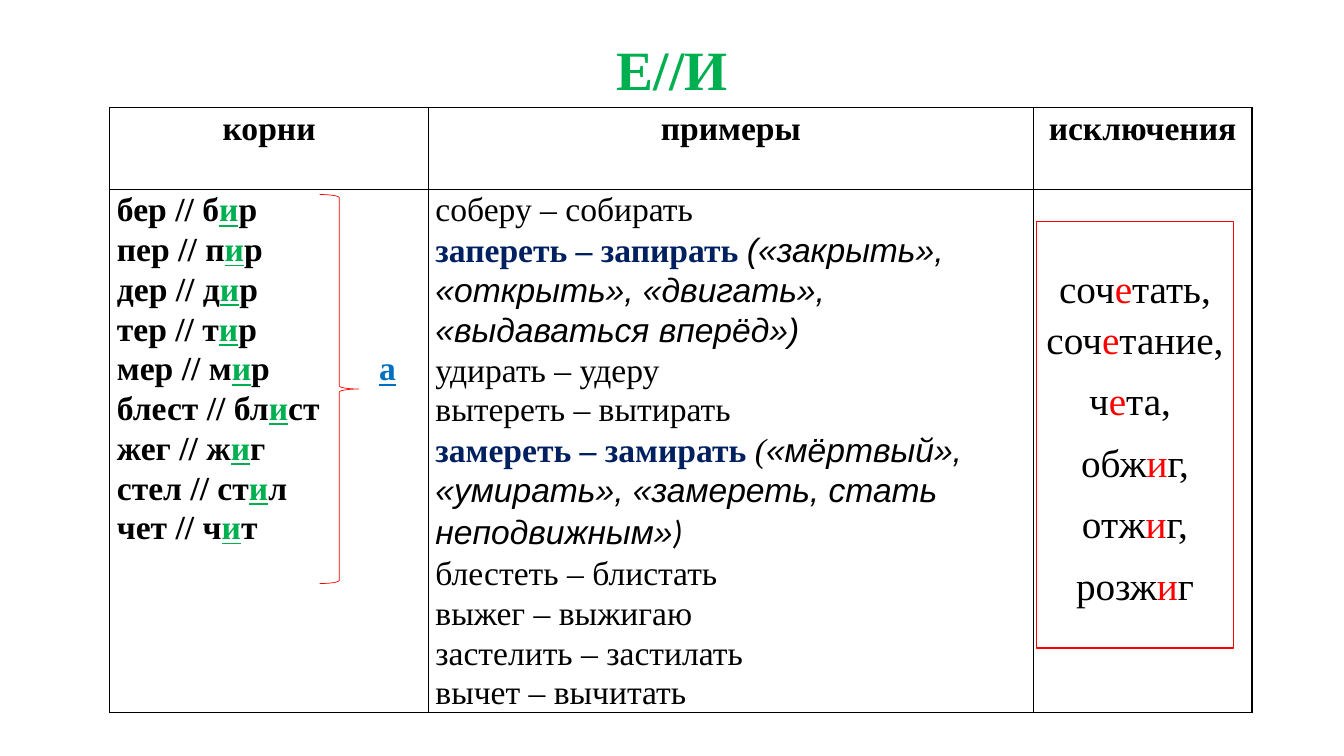
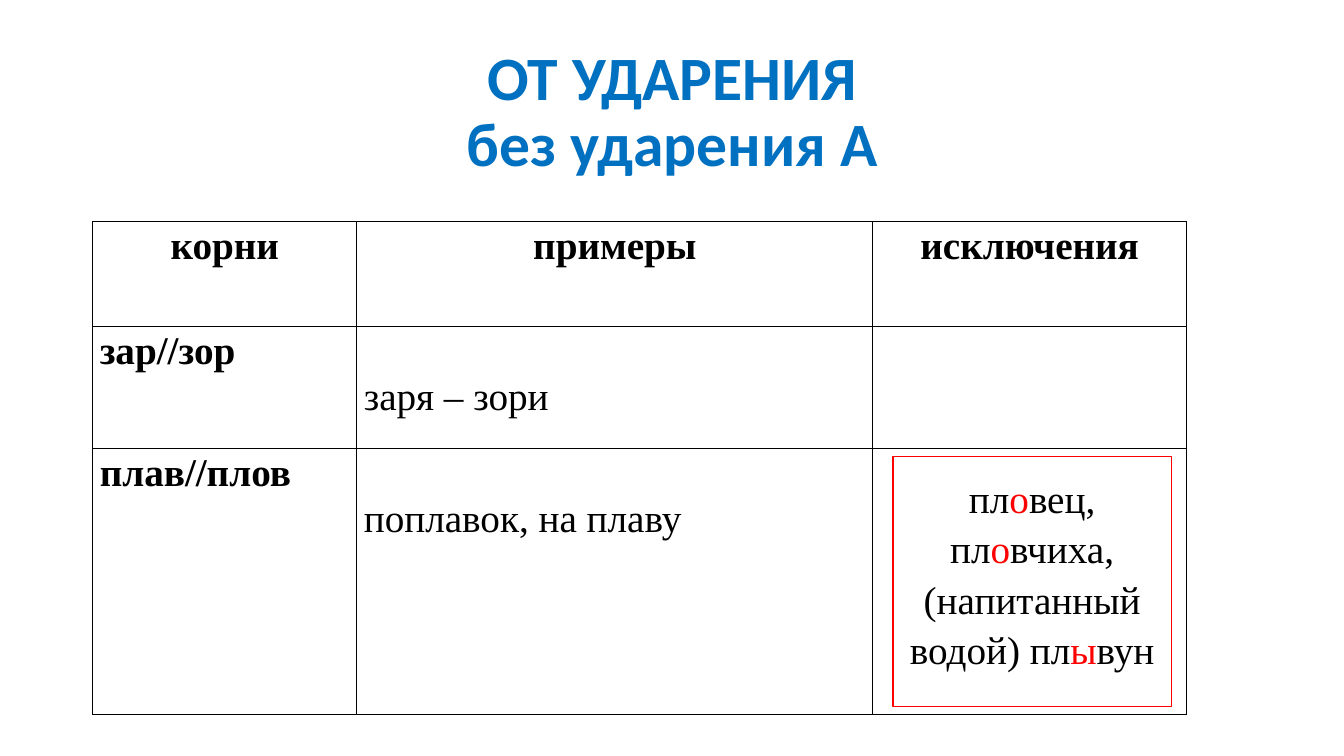
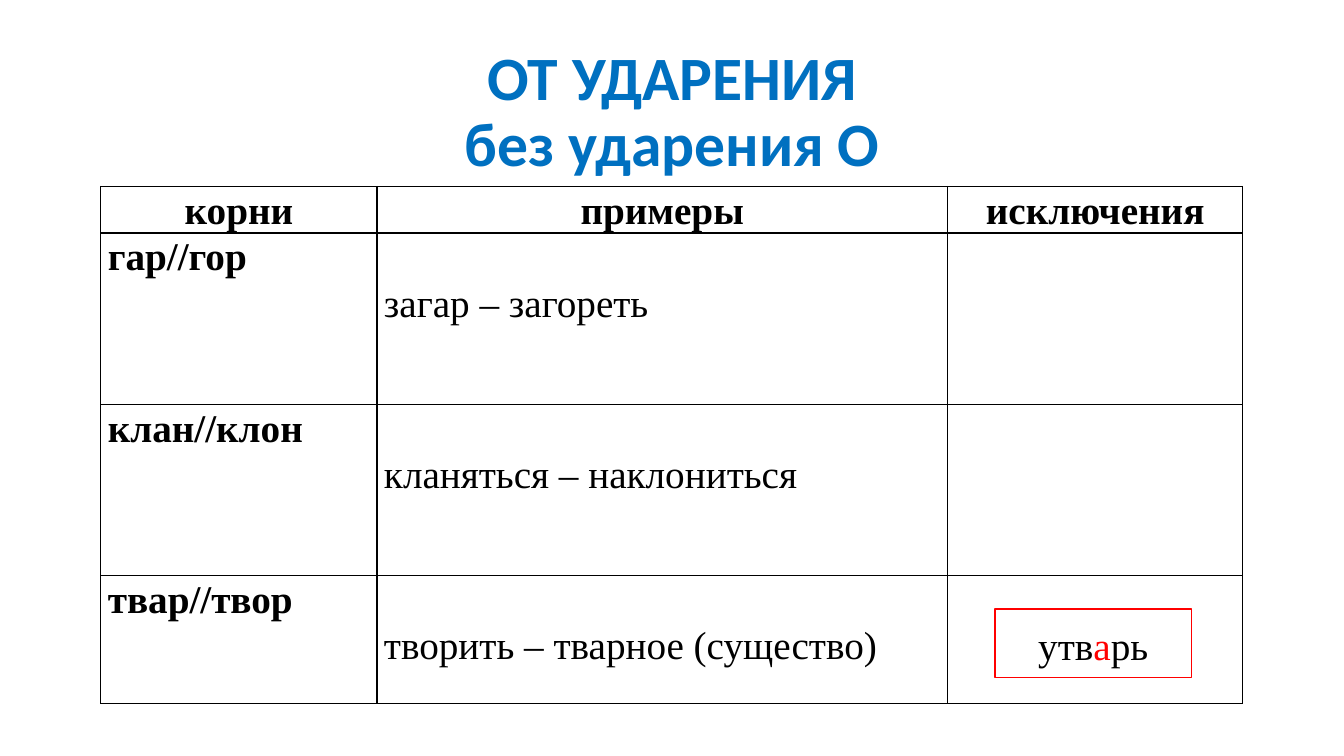
from dataclasses import dataclass
from typing import Any

from lxml import etree
from pptx import Presentation
from pptx.dml.color import RGBColor
from pptx.enum.shapes import MSO_SHAPE
from pptx.enum.text import MSO_ANCHOR, MSO_AUTO_SIZE, PP_ALIGN
from pptx.oxml.ns import qn
from pptx.util import Emu, Inches, Pt

RECT, BRACE = MSO_SHAPE.RECTANGLE, MSO_SHAPE.RIGHT_BRACE
TOP, MIDDLE = MSO_ANCHOR.TOP, MSO_ANCHOR.MIDDLE
LEFT, CENTER = PP_ALIGN.LEFT, PP_ALIGN.CENTER
FIXED = MSO_AUTO_SIZE.NONE

BLACK = RGBColor(0x00, 0x00, 0x00)
WHITE = RGBColor(0xFF, 0xFF, 0xFF)
RED = RGBColor(0xFF, 0x00, 0x00)
GREEN = RGBColor(0x00, 0xB0, 0x50)
BLUE = RGBColor(0x00, 0x70, 0xC0)
NAVY = RGBColor(0x00, 0x20, 0x60)

SERIF, SANS, PLAIN = "Times New Roman", "Arial", "Calibri"
HEADS = ("корни", "примеры", "исключения")

# Grid: ten steps to the inch
STEP = Inches(0.1)
WIDTH, HEIGHT = 133.33, 75
LINE = 4.6  # one line of 28 pt text

# A mark on both sides of a piece of text gives it a style
MARKS: dict[str, dict[str, Any]] = {
    "*": {"color": GREEN, "underline": True},
    "@": {"color": BLUE, "underline": True},
    "^": {"color": RED},
    "#": {"color": NAVY, "bold": True},
    "~": {"name": SANS, "italic": True},
    "%": {"italic": True},
    "$": {"name": PLAIN, "italic": True},
}


@dataclass
class Box:
    left: float
    top: float
    width: float
    height: float

    def place(self) -> tuple[Emu, ...]:
        return tuple(map(steps, (self.left, self.top, self.width, self.height)))


@dataclass
class Title:
    lines: tuple[str, ...]
    height: float = 14.5
    anchor: Any = MIDDLE
    inset: float = 0.5
    size: float = 44
    font: str = PLAIN
    color: RGBColor = BLUE


@dataclass
class Table:
    left: float
    top: float
    cols: tuple[float, ...]
    rows: tuple[float, ...]
    roots: tuple[str, ...]
    words: tuple[str, ...]
    size: int = 28
    drop: float = LINE  # gap above the examples


@dataclass
class Note:
    box: Box
    lines: tuple[str, ...]
    after: int = 8
    foot: float = 0.5


@dataclass
class Page:
    title: Title
    table: Table
    note: Note
    brace: Box | None = None


PAGES = (
    Page(
        Title(("Е//И",), 11.9, TOP, 0.2, 39.6, SERIF, GREEN),
        Table(
            10.9, 10.7, (31.6, 60, 21.7), (8.1, 49.5),
            ("бер // б*и*р\nпер // п*и*р\nдер // д*и*р\nтер // т*и*р\n"
             "мер // м*и*р\t@а@\nблест // бл*и*ст\nжег // ж*и*г\n"
             "стел // ст*и*л\nчет // ч*и*т",),
            ("соберу – собирать\n"
             "#запереть – запирать #~(«закрыть», «открыть», «двигать», "
             "«выдаваться вперёд»)~\n"
             "удирать – удеру\nвытереть – вытирать\n"
             "#замереть – замирать #%(%~«мёртвый», «умирать», "
             "«замереть, стать неподвижным»~$)$\n"
             "блестеть – блистать\nвыжег – выжигаю\n"
             "застелить – застилать\nвычет – вычитать",),
            size=24, drop=0,
        ),
        Note(
            Box(102.8, 22, 19.6, 42.3),
            ("соч^е^тать, соч^е^тание,", "ч^е^та, ", "обж^и^г,", "отж^и^г,",
             "розж^и^г"),
        ),
        Box(31.7, 19.3, 3.9, 38.6),
    ),
    Page(
        Title(("ОТ УДАРЕНИЯ", "без ударения А")),
        Table(
            9.2, 22, (26.2, 51.2, 31.1), (10.4, 12.1, 26.4),
            ("зар//зор", "плав//плов"),
            ("заря – зори", "поплавок, на плаву"),
        ),
        Note(
            Box(88.6, 45.3, 27.6, 24.8),
            ("пл^о^вец, пл^о^вчиха,", "(напитанный водой) пл^ы^вун"),
            after=0, foot=2.5,
        ),
    ),
    Page(
        Title(("ОТ УДАРЕНИЯ", "без ударения О")),
        Table(
            10, 18.5, (27.4, 56.6, 29.3), (4.2, 17, 17, 12.7),
            ("гар//гор", "клан//клон", "твар//твор"),
            ("загар – загореть", "кланяться – наклониться",
             "творить – тварное (существо)"),
        ),
        Note(Box(98.7, 60.4, 19.5, 6.8), ("утв^а^рь",)),
    ),
)


def steps(count: float) -> Emu:
    return Emu(round(count * STEP))


def apply(font: Any, form: dict[str, Any]) -> None:
    for key, value in form.items():
        if key == "color":
            font.color.rgb = value
        else:
            setattr(font, key, value)


def split(text: str) -> list[tuple[str, str]]:
    """Cut marked text into pairs of mark and piece."""
    parts, mark, piece = [], "", ""
    for char in text:
        if char in MARKS:
            parts.append((mark, piece))
            mark, piece = ("" if mark else char), ""
        else:
            piece += char
    return [pair for pair in parts + [(mark, piece)] if pair[1]]


def write(frame: Any, lines: list[str] | tuple[str, ...], form: dict[str, Any],
          align: Any, after: int = 0) -> None:
    for row, line in enumerate(lines):
        para = frame.paragraphs[0] if row == 0 else frame.add_paragraph()
        para.alignment, para.line_spacing = align, 1.07
        para.space_before, para.space_after = Pt(0), Pt(after)
        if "\t" in line:
            tabs = etree.SubElement(para._p.get_or_add_pPr(), qn("a:tabLst"))
            etree.SubElement(tabs, qn("a:tab"), pos=str(steps(26)), algn="l")
        for mark, piece in split(line):
            run = para.add_run()
            run.text = piece
            apply(run.font, form | MARKS.get(mark, {}))


def border(cell: Any) -> None:
    props = cell._tc.get_or_add_tcPr()
    for side in ("lnL", "lnR", "lnT", "lnB"):
        line = etree.SubElement(props, qn(f"a:{side}"), w=str(Pt(1)))
        fill = etree.SubElement(line, qn("a:solidFill"))
        etree.SubElement(fill, qn("a:srgbClr"), val=str(BLACK))


def head(slide: Any, title: Title) -> None:
    shape = slide.shapes.title
    box = Box(9.2, 4, 115, title.height)
    shape.left, shape.top, shape.width, shape.height = box.place()
    frame = shape.text_frame
    frame.auto_size, frame.word_wrap = FIXED, True
    frame.vertical_anchor, frame.margin_top = title.anchor, steps(title.inset)
    para = frame.paragraphs[0]
    para.alignment, para.line_spacing = CENTER, 0.9
    para.space_before = Pt(0)
    form = {"name": title.font, "size": Pt(title.size), "bold": True,
            "color": title.color}
    for row, line in enumerate(title.lines):
        if row:
            para.add_line_break()
        run = para.add_run()
        run.text = line
        apply(run.font, form)


def chart(slide: Any, data: Table) -> None:
    """Draw the table of roots."""
    box = Box(data.left, data.top, sum(data.cols), sum(data.rows))
    table = slide.shapes.add_table(
        len(data.rows), len(data.cols), *box.place()).table
    table.first_row = table.horz_banding = False
    for col, width in zip(table.columns, data.cols):
        col.width = steps(width)
    for row, height in zip(table.rows, data.rows):
        row.height = steps(height)

    texts = [HEADS, *((root, word, "")
                      for root, word in zip(data.roots, data.words))]
    for row, line in enumerate(texts):
        for col, text in enumerate(line):
            cell = table.cell(row, col)
            border(cell)
            cell.fill.background()
            body = row > 0 and col == 1
            cell.margin_left = cell.margin_right = steps(0.7)
            cell.margin_top = steps(data.drop if body else 0)
            cell.margin_bottom = 0
            form = {"name": SERIF, "size": Pt(data.size), "bold": not body,
                    "color": BLACK}
            write(cell.text_frame, text.split("\n"), form,
                  LEFT if row else CENTER)


def outline(slide: Any, kind: Any, box: Box, width: float) -> Any:
    shape = slide.shapes.add_shape(kind, *box.place())
    shape.shadow.inherit = False
    shape.line.color.rgb, shape.line.width = RED, Pt(width)
    return shape


def remark(slide: Any, note: Note) -> None:
    shape = outline(slide, RECT, note.box, 1)
    shape.fill.solid()
    shape.fill.fore_color.rgb = WHITE
    frame = shape.text_frame
    frame.word_wrap, frame.vertical_anchor = True, MIDDLE
    frame.margin_bottom = steps(note.foot)
    form = {"name": SERIF, "size": Pt(28), "color": BLACK}
    write(frame, note.lines, form, CENTER, note.after)


def main() -> None:
    deck = Presentation()
    deck.slide_width, deck.slide_height = steps(WIDTH), steps(HEIGHT)
    for page in PAGES:
        slide = deck.slides.add_slide(deck.slide_layouts[5])
        head(slide, page.title)
        chart(slide, page.table)
        remark(slide, page.note)
        if page.brace:
            brace = outline(slide, BRACE, page.brace, 0.5)
            brace.fill.background()
            brace.adjustments[0] = 0.08
    deck.save("out.pptx")


if __name__ == "__main__":
    main()
